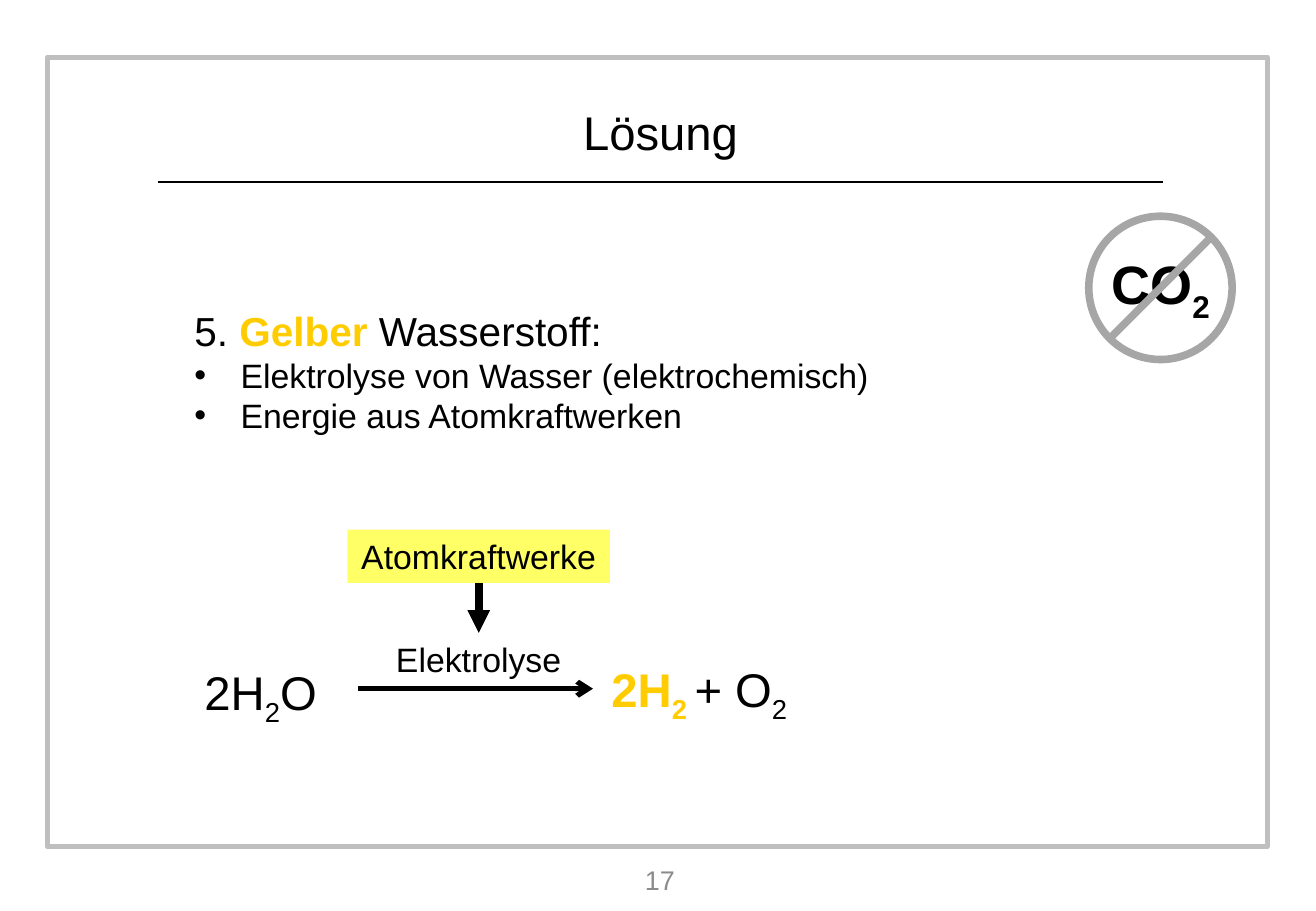
from lxml import etree
from pptx import Presentation
from pptx import util as u
from pptx.dml.color import RGBColor
from pptx.enum import shapes, text
from pptx.oxml.ns import qn

PX = 9144  # 100 px to the inch
FONT = "Arial"
HUES = {"ink": "000000", "paper": "FFFFFF", "frame": "BFBFBF", "ban": "A6A6A6",
        "page": "8C8C8C", "gold": "FFCC00", "plant": "FFFF66"}
MID, TOP = text.MSO_ANCHOR.MIDDLE, text.MSO_ANCHOR.TOP
CENTER, LEFT = text.PP_ALIGN.CENTER, text.PP_ALIGN.LEFT
SUB = {"sub": True}
GOLD = {"hue": "gold", "bold": True}


def px(*nums):
    return [u.Emu(n * PX) for n in nums]


def rgb(hue):
    return RGBColor.from_string(HUES[hue])


def add_run(para, words, size, hue="ink", bold=False, sub=False):
    run = para.add_run()
    run.text = words
    font = run.font
    font.name, font.size, font.bold = FONT, u.Pt(size), bold
    font.color.rgb = rgb(hue)
    if sub:
        run._r.get_or_add_rPr().set("baseline", "-25000")


def write(para, runs, size, align=LEFT):
    """Fill a paragraph with (words, options) runs."""
    para.alignment = align
    para.space_before = u.Pt(0)
    for words, opts in runs:
        add_run(para, words, size, **opts)


def set_frame(shape, anchor, wrap=True):
    frame = shape.text_frame
    frame.auto_size = text.MSO_AUTO_SIZE.NONE
    frame.word_wrap = wrap
    frame.vertical_anchor = anchor
    return frame


def place(shape, box):
    shape.left, shape.top, shape.width, shape.height = px(*box)


def set_bullet(para, indent=0):
    """Hang a bullet by the indent, or remove it when the indent is 0."""
    props = para._p.get_or_add_pPr()
    props.set("marL", str(indent * PX))
    props.set("indent", str(-indent * PX))
    if indent:
        etree.SubElement(props, qn("a:buFont")).set("typeface", FONT)
        etree.SubElement(props, qn("a:buChar")).set("char", "•")
    else:
        etree.SubElement(props, qn("a:buNone"))


def add_label(slide, box, runs, size, anchor=TOP):
    label = slide.shapes.add_textbox(*px(*box))
    write(set_frame(label, anchor).paragraphs[0], runs, size, CENTER)
    return label


def add_form(slide, kind, box, fill=None, line=None, width=0):
    form = slide.shapes.add_shape(kind, *px(*box))
    form.shadow.inherit = False
    if fill:
        form.fill.solid()
        form.fill.fore_color.rgb = rgb(fill)
    else:
        form.fill.background()
    if line:
        form.line.color.rgb = rgb(line)
        form.line.width = u.Pt(width)
    else:
        form.line.fill.background()
    return form


def add_line(slide, ends, width, hue="ink", head=None):
    line = slide.shapes.add_connector(shapes.MSO_CONNECTOR.STRAIGHT, *px(*ends))
    line.line.color.rgb = rgb(hue)
    line.line.width = u.Pt(width)
    if head:
        tail = etree.SubElement(line.line._get_or_add_ln(), qn("a:tailEnd"))
        tail.set("type", head)
    etree.SubElement(line._element.spPr, qn("a:effectLst"))
    return line


def add_header(slide, x, y, w, h):
    add_form(slide, shapes.MSO_SHAPE.RECTANGLE, (x, y, w, h), line="frame", width=3)
    add_line(slide, (x + 91, y + 103, x + 918, y + 103), 1.5)
    title = slide.shapes.title
    place(title, (x + 430, y + 32, 149, 59))
    para = set_frame(title, MID, wrap=False).paragraphs[0]
    write(para, [("Lösung", {})], 28, CENTER)


def add_list(slide, box):
    body = slide.placeholders[1]
    place(body, box)
    frame = set_frame(body, MID)
    head = frame.paragraphs[0]
    write(head, [("5. ", {}), ("Gelber", GOLD), (" Wasserstoff:", {})], 24)
    set_bullet(head)
    for words in ("Elektrolyse von Wasser (elektrochemisch)",
                  "Energie aus Atomkraftwerken"):
        para = frame.add_paragraph()
        write(para, [(words, {})], 20)
        set_bullet(para, 38)


def add_scheme(slide, x, y):
    """Draw the power source above the reaction equation."""
    plant = add_form(slide, shapes.MSO_SHAPE.RECTANGLE, (x + 130, y, 216, 44), "plant")
    write(set_frame(plant, MID).paragraphs[0], [("Atomkraftwerke", {})], 20, CENTER)
    step = add_label(slide, (x + 140, y + 85, 196, 39), [("Elektrolyse", {})], 20)
    feed = add_line(slide, (x + 238, y + 44, x + 238, y + 85), 4.5, head="triangle")
    feed.begin_connect(plant, 2)
    feed.end_connect(step, 0)
    add_label(slide, (x, y + 105, 117, 57), [("2H", {}), ("2", SUB), ("O", {})], 28)
    add_line(slide, (x + 139, y + 131, x + 332, y + 131), 3, head="arrow")
    add_label(slide, (x + 331, y + 103, 177, 57),
              [("2H", GOLD), ("2 ", GOLD | SUB), ("+ O", {}), ("2", SUB)], 28)


def add_ban(slide, x, y, size):
    """Draw a ring with struck-out CO₂."""
    ring = add_form(slide, shapes.MSO_SHAPE.OVAL, (x, y, size, size), "paper", "ban", 4.5)
    frame = set_frame(ring, MID)
    frame.margin_left = frame.margin_right = frame.margin_top = frame.margin_bottom = 0
    bold = {"bold": True}
    write(frame.paragraphs[0], [("CO", bold), ("2", bold | SUB)], 32, CENTER)
    gap = round(size * 0.15)
    add_line(slide, (x + size - gap, y + gap, x + gap, y + size - gap), 4.5, "ban")


def main():
    deck = Presentation()
    deck.slide_width, deck.slide_height = px(1083, 750)
    slide = deck.slides.add_slide(deck.slide_layouts[1])
    add_header(slide, 39, 47, 1004, 650)
    add_list(slide, (150, 157, 787, 296))
    add_label(slide, (421, 705, 244, 39), [("17", {"hue": "page"})], 16, MID)
    add_scheme(slide, 156, 436)
    add_ban(slide, 896, 178, 118)
    deck.save("out.pptx")


if __name__ == "__main__":
    main()
